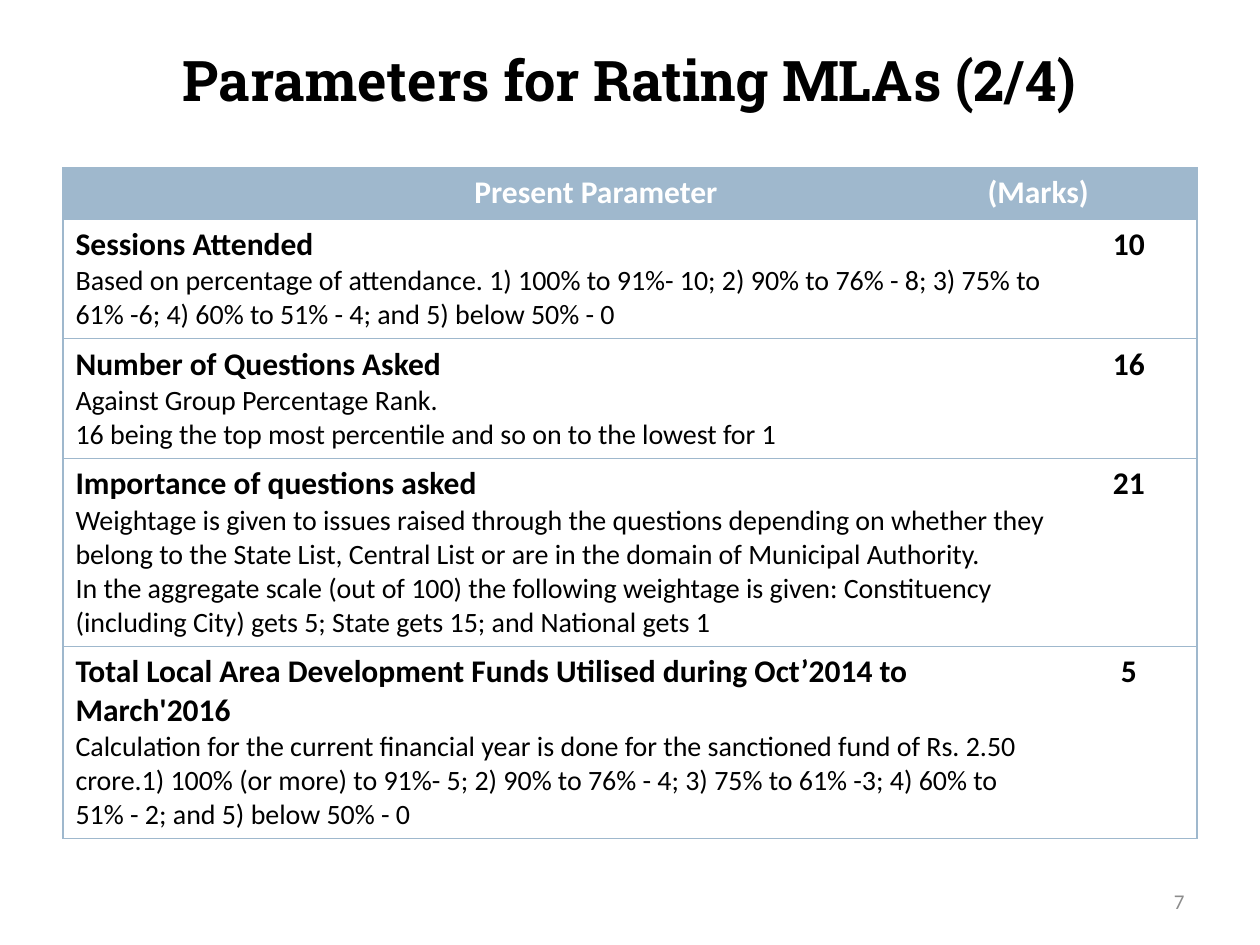
from lxml.etree import SubElement
from pptx import Presentation
from pptx.dml.color import RGBColor
from pptx.enum.text import MSO_ANCHOR, PP_ALIGN
from pptx.oxml.ns import qn
from pptx.util import Inches, Pt

BLUE = "9FB8CD"
NO_STYLE_NO_GRID = "{2D5ABB26-0587-4C30-8999-92F81FD0307C}"


def format_text(paragraph, size, color, bold=False, align=PP_ALIGN.LEFT, face="Calibri"):
    paragraph.alignment = align
    font = paragraph.font
    font.name, font.size, font.bold = face, Pt(size), bold
    font.color.rgb = RGBColor.from_string(color)


def add_borders(cell, sides):
    properties = cell._tc.get_or_add_tcPr()
    for side in "LRTB":
        line = SubElement(properties, qn(f"a:ln{side}"), w=str(Pt(0.75)))
        if side in sides:
            fill = SubElement(line, qn("a:solidFill"))
            SubElement(fill, qn("a:srgbClr"), val=BLUE)
        else:
            SubElement(line, qn("a:noFill"))


parameters = [
    ("Sessions Attended",
     "Based on percentage of attendance. 1) 100% to 91%- 10; 2) 90% to 76% - 8; "
     "3) 75% to 61% -6; 4) 60% to 51% - 4; and 5) below 50% - 0",
     "10", 0.95),
    ("Number of Questions Asked",
     "Against Group Percentage Rank.\v"
     "16 being the top most percentile and so on to the lowest for 1",
     "16", 0.95),
    ("Importance of questions asked",
     "Weightage is given to issues raised through the questions depending on whether they "
     "belong to the State List, Central List or are in the domain of Municipal Authority.\v"
     "In the aggregate scale (out of 100) the following weightage is given: Constituency "
     "(including City) gets 5; State gets 15; and National gets 1",
     "21", 1.49),
    ("Total Local Area Development Funds Utilised during Oct’2014 to March'2016",
     "Calculation for the current financial year is done for the sanctioned fund of "
     "Rs. 2.50 crore.1) 100% (or more) to 91%- 5; 2) 90% to 76% - 4; 3) 75% to 61% -3; "
     "4) 60% to 51% - 2; and 5) below 50% - 0",
     "5", 1.52),
]

prs = Presentation()
prs.slide_width, prs.slide_height = Inches(10), Inches(7.5)
slide = prs.slides.add_slide(prs.slide_layouts[5])

title = slide.shapes.title
title.left, title.top, title.width, title.height = Inches(0.5), Inches(0), Inches(9), Inches(1.25)
title.text_frame.text = "Parameters for Rating MLAs (2/4)"
title.text_frame.vertical_anchor = MSO_ANCHOR.MIDDLE
format_text(title.text_frame.paragraphs[0], 32, "000000", True, PP_ALIGN.CENTER, "Roboto Slab")

ratings = slide.shapes.add_table(
    len(parameters) + 1, 2, Inches(0.5), Inches(1.33), Inches(9), Inches(5.32)).table
ratings.horz_banding = False
ratings._tbl.tblPr.find(qn("a:tableStyleId")).text = NO_STYLE_NO_GRID
ratings.columns[0].width = Inches(7.92)
ratings.columns[1].width = Inches(1.08)

ratings.rows[0].height = Inches(0.41)
header = ratings.cell(0, 0)
header.merge(ratings.cell(0, 1))
for cell in ratings.rows[0].cells:
    add_borders(cell, "LRTB")
    cell.fill.solid()
    cell.fill.fore_color.rgb = RGBColor.from_string(BLUE)
heading = header.text_frame.paragraphs[0]
heading.text = "\tPresent Parameter\t(Marks)"
tabs = SubElement(heading._p.get_or_add_pPr(), qn("a:tabLst"))
for position in (4.13, 7.64):
    SubElement(tabs, qn("a:tab"), pos=str(Inches(position)), algn="ctr")
format_text(heading, 18, "FFFFFF", True)

for row, (name, rule, marks, height) in enumerate(parameters, 1):
    ratings.rows[row].height = Inches(height)
    parameter_cell, marks_cell = ratings.cell(row, 0), ratings.cell(row, 1)
    for cell, sides in ((parameter_cell, "LTB"), (marks_cell, "RTB")):
        add_borders(cell, sides)
        cell.fill.background()
    name_line = parameter_cell.text_frame.paragraphs[0]
    name_line.text = name
    format_text(name_line, 18, "000000", True)
    rule_lines = parameter_cell.text_frame.add_paragraph()
    rule_lines.text = rule
    format_text(rule_lines, 16, "000000")
    marks_cell.text_frame.text = marks
    format_text(marks_cell.text_frame.paragraphs[0], 18, "000000", True, PP_ALIGN.CENTER)

page_number = slide.shapes.add_textbox(
    Inches(7.17), Inches(6.95), Inches(2.33), Inches(0.4)).text_frame
page_number.word_wrap = True
page_number.vertical_anchor = MSO_ANCHOR.MIDDLE
page_number.text = "7"
format_text(page_number.paragraphs[0], 12, "8C8C8C", align=PP_ALIGN.RIGHT)

prs.save("out.pptx")
